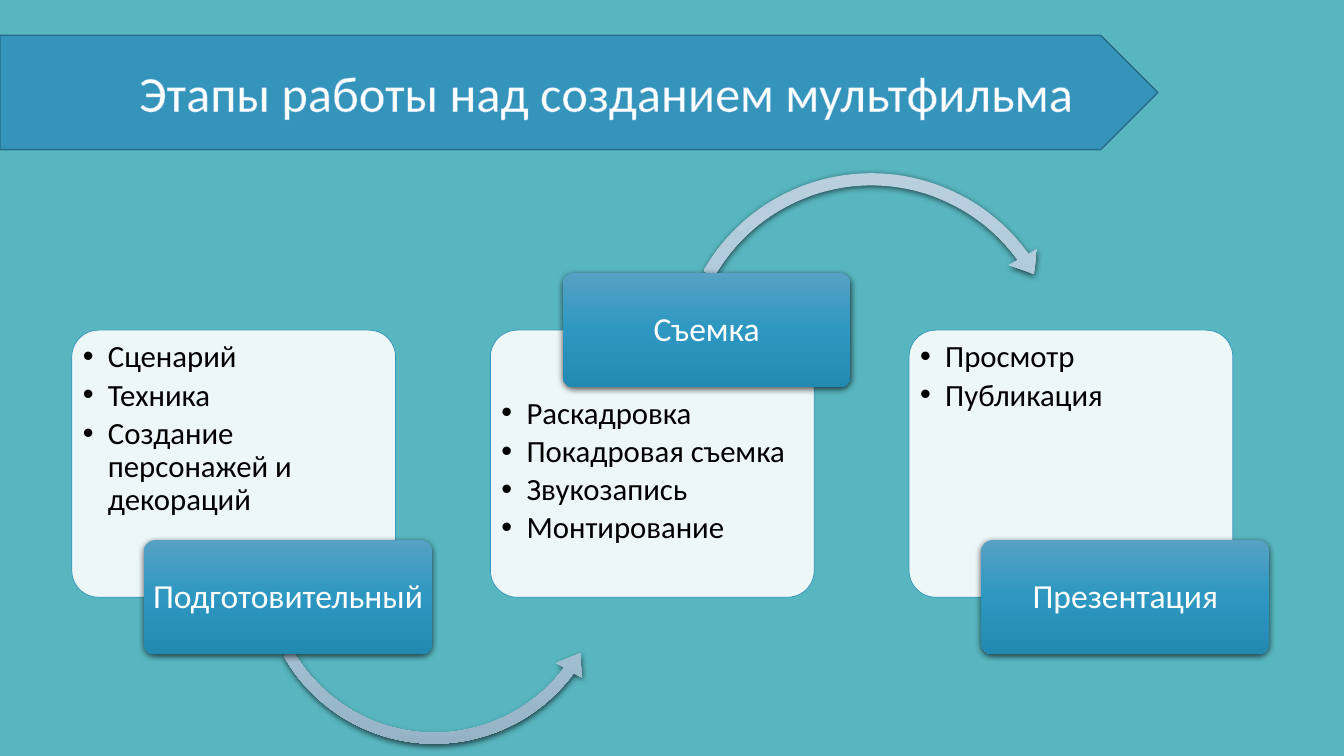
from dataclasses import dataclass

from pptx import Presentation as Deck
from pptx.dml.color import RGBColor as Rgb
from pptx.enum.shapes import MSO_SHAPE as Kind
from pptx.enum.text import MSO_ANCHOR as Anchor, MSO_AUTO_SIZE as Fit, PP_ALIGN as Align
from pptx.oxml import parse_xml as to_xml
from pptx.oxml.ns import nsdecls, qn
from pptx.util import Cm, Pt


@dataclass(frozen=True)
class Theme:
    font: str = "Calibri"
    back: str = "58B6C0"
    blue: str = "3494BA"
    edge: str = "266D8A"
    glow: str = "75B6E5"
    white: str = "FFFFFF"
    black: str = "000000"
    label: tuple[str, ...] = ("56A1C4", "2D97C1", "2289B1")
    arrow: tuple[str, ...] = ("B8CFDE", "ACC8DB", "96B3C6")
    head: int = 36
    name: int = 24
    item: int = 22


@dataclass(frozen=True)
class Box:
    left: float
    top: float
    width: float
    height: float

    def place(self) -> tuple[Cm, Cm, Cm, Cm]:
        return Cm(self.left), Cm(self.top), Cm(self.width), Cm(self.height)


@dataclass(frozen=True)
class Stage:
    name: str
    items: tuple[str, ...]
    above: bool = False


@dataclass(frozen=True)
class Arrow:
    kind: Kind
    box: Box
    bends: tuple[float, ...]


THEME = Theme()
CARD = Box(1.81, 8.32, 8.16, 6.73)
LABEL = Box(1.82, 0, 7.26, 2.88)
STEP = 10.55
STAGES = (
    Stage("Подготовительный", ("Сценарий", "Техника", "Создание персонажей и декораций")),
    Stage("Съемка", ("Раскадровка", "Покадровая съемка", "Звукозапись", "Монтирование"), True),
    Stage("Презентация", ("Просмотр", "Публикация")),
)
ARROWS = (
    Arrow(Kind.LEFT_CIRCULAR_ARROW, Box(6.35, 9.78, 9.19, 9.19),
          (0.03, 4.16, 21.92, 90.25, 0.04)),
    Arrow(Kind.CIRCULAR_ARROW, Box(16.84, 4.11, 10.24, 10.24),
          (0.03, 3.71, 194.54, 125.76, 0.04)),
)


def move(shape, box: Box) -> None:
    shape.left, shape.top, shape.width, shape.height = box.place()


def node(text: str):
    tag, rest = text.split(" ", 1)
    return to_xml(f"<a:{tag} {nsdecls('a')} {rest}")


def style(para, size: int, tint: str) -> None:
    for run in para.runs:
        run.font.name = THEME.font
        run.font.size = Pt(size)
        run.font.bold = False
        run.font.color.rgb = Rgb.from_string(tint)


def inset(frame, left: float, top: float, base: float) -> None:
    frame.margin_left = frame.margin_right = Cm(left)
    frame.margin_top, frame.margin_bottom = Cm(top), Cm(base)


def blend(shape, tints: tuple[str, ...]) -> None:
    shape.fill.gradient()
    shape.fill.gradient_angle = 270
    stops = shape._element.spPr.find(".//" + qn("a:gsLst"))
    for stop in list(stops):
        stops.remove(stop)
    for rank, tint in enumerate(tints):
        stops.append(node(f'gs pos="{rank * 50000}"><a:srgbClr val="{tint}"/></a:gs>'))
    shape.line.fill.background()
    shape.shadow.inherit = False
    shape._element.spPr.find(qn("a:effectLst")).append(node(
        'outerShdw blurRad="57150" dist="19050" dir="5400000" algn="ctr" rotWithShape="0">'
        f'<a:srgbClr val="{THEME.black}"><a:alpha val="63000"/></a:srgbClr></a:outerShdw>'))


def draw_card(card, stage: Stage, left: float) -> None:
    move(card, Box(left, CARD.top, CARD.width, CARD.height))
    props = card._element.spPr
    props.append(node('prstGeom prst="roundRect"><a:avLst>'
                      '<a:gd name="adj" fmla="val 10000"/></a:avLst></a:prstGeom>'))
    card.fill.solid()
    card.fill.fore_color.rgb = Rgb.from_string(THEME.white)
    props.find(".//" + qn("a:srgbClr")).append(node('alpha val="90000"/>'))
    card.line.color.rgb = Rgb.from_string(THEME.blue)
    card.line.width = Pt(0.5)
    frame = card.text_frame
    frame.text = "\n".join(stage.items)
    frame.auto_size = Fit.NONE
    frame.word_wrap = True
    frame.vertical_anchor = Anchor.TOP
    inset(frame, 0.08, *((1.5, 0.08) if stage.above else (0.08, 1.5)))
    for para in frame.paragraphs:
        para.level = 1
        para.alignment = Align.LEFT
        para.line_spacing = 0.9
        para.space_before = Pt(0)
        para.space_after = Pt(3.6)
        form = para._p.get_or_add_pPr()
        form.set("marL", str(Cm(0.635)))
        form.set("indent", str(-Cm(0.635)))
        form.append(node('buFont typeface="Arial"/>'))
        form.append(node('buChar char="•"/>'))
        style(para, THEME.item, THEME.black)


def draw_label(shapes, stage: Stage, left: float) -> None:
    edge = CARD.top if stage.above else CARD.top + CARD.height
    box = Box(left + LABEL.left, edge - LABEL.height / 2, LABEL.width, LABEL.height)
    label = shapes.add_shape(Kind.ROUNDED_RECTANGLE, *box.place())
    label.adjustments[0] = 0.1
    blend(label, THEME.label)
    frame = label.text_frame
    frame.text = stage.name
    frame.word_wrap = True
    frame.vertical_anchor = Anchor.MIDDLE
    inset(frame, 0.1, 0.1, 0.1)
    para = frame.paragraphs[0]
    para.alignment = Align.CENTER
    para.line_spacing = 0.9
    style(para, THEME.name, THEME.white)


def draw_arrow(shapes, arrow: Arrow) -> None:
    shape = shapes.add_shape(arrow.kind, *arrow.box.place())
    for rank, bend in enumerate(arrow.bends):
        shape.adjustments[rank] = bend
    blend(shape, THEME.arrow)


def draw_title(shapes) -> None:
    banner = shapes.add_shape(Kind.PENTAGON, *Box(0, 0.89, 29.18, 2.88).place())
    banner.fill.solid()
    banner.fill.fore_color.rgb = Rgb.from_string(THEME.blue)
    banner.line.color.rgb = Rgb.from_string(THEME.edge)
    banner.line.width = Pt(1)
    banner.shadow.inherit = False
    title = shapes.title
    move(title, Box(3.25, 1.42, 26.21, 1.8))
    frame = title.text_frame
    frame.text = "Этапы работы над созданием мультфильма"
    frame.auto_size = Fit.NONE
    frame.word_wrap = True
    frame.vertical_anchor = Anchor.TOP
    para = frame.paragraphs[0]
    para.alignment = Align.LEFT
    style(para, THEME.head, THEME.white)
    para.runs[0]._r.get_or_add_rPr().insert(0, node(
        f'ln w="9525"><a:solidFill><a:srgbClr val="{THEME.glow}"/></a:solidFill></a:ln>'))
    banner._element.addnext(title._element)


def main() -> None:
    deck = Deck()
    deck.slide_width, deck.slide_height = Cm(33.87), Cm(19.05)
    slide = deck.slides.add_slide(deck.slide_layouts.get_by_name("Comparison"))
    slide.background.fill.solid()
    slide.background.fill.fore_color.rgb = Rgb.from_string(THEME.back)
    shapes = slide.shapes
    *cards, spare = list(slide.placeholders)[1:]
    spare._element.getparent().remove(spare._element)
    for arrow in ARROWS:
        draw_arrow(shapes, arrow)
    for rank, (card, stage) in enumerate(zip(cards, STAGES)):
        left = CARD.left + rank * STEP
        draw_card(card, stage, left)
        draw_label(shapes, stage, left)
    draw_title(shapes)
    deck.save("out.pptx")


if __name__ == "__main__":
    main()
